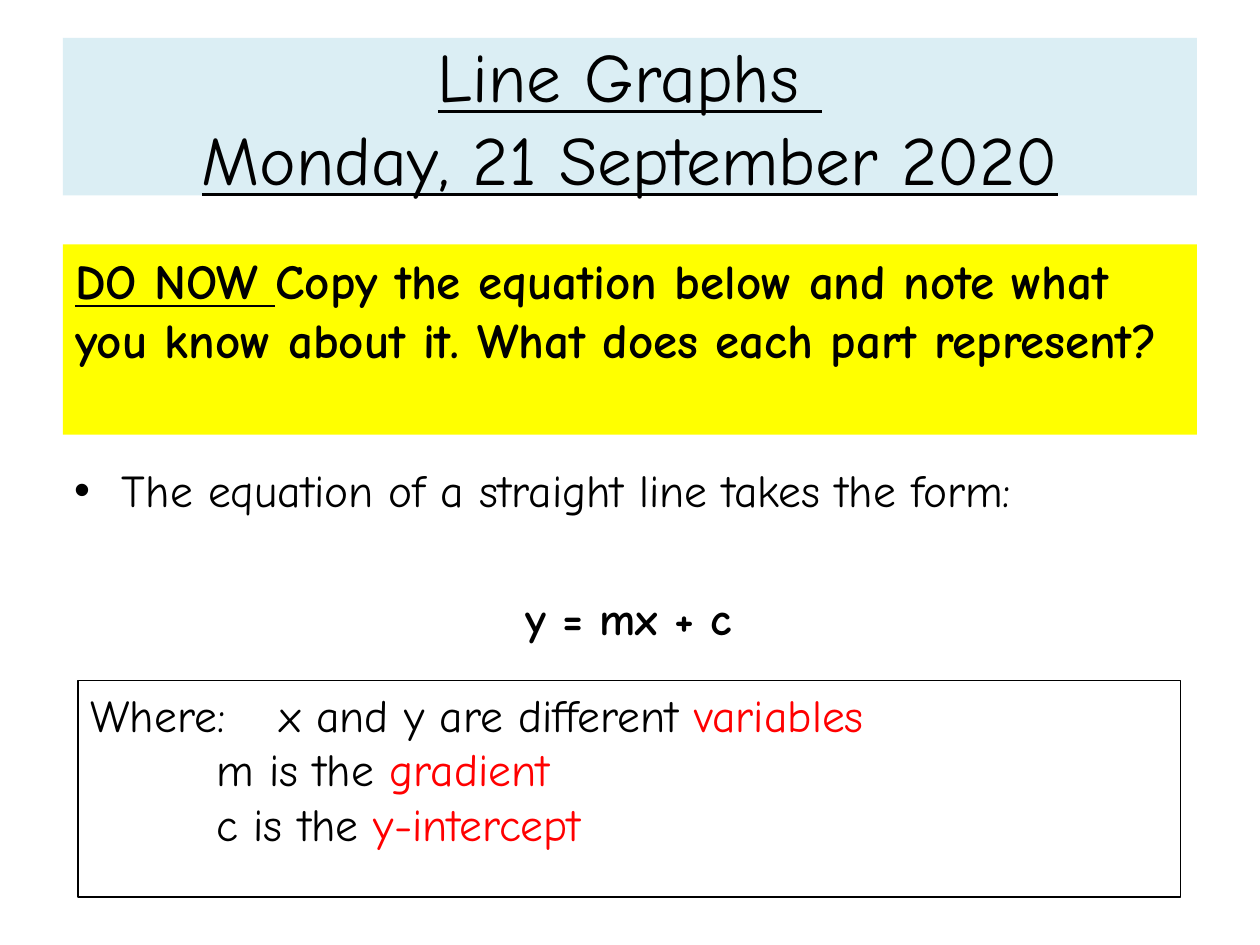
from dataclasses import dataclass

from lxml import etree
from pptx import Presentation, util as u
from pptx.dml.color import RGBColor
from pptx.enum import shapes, text
from pptx.oxml.ns import qn


@dataclass(frozen=True)
class Theme:
    font: str = "Comic Neue"
    ink: str = "000000"
    key: str = "FF0000"
    title_fill: str = "DBEEF4"
    task_fill: str = "FFFF00"
    title_size: float = 39.6
    task_size: float = 28
    body_size: float = 26


@dataclass(frozen=True)
class Span:
    words: str
    color: str = Theme.ink
    bold: bool = False
    underline: bool = False


@dataclass(frozen=True)
class Line:
    spans: tuple[Span, ...]
    centred: bool = False
    bullet: bool = False
    space_before: float = 0


@dataclass(frozen=True)
class Panel:
    # left, top, width and height as shares of the slide
    area: tuple[float, float, float, float]
    size: float
    lines: tuple[Line, ...]
    fill: str | None = None
    border: bool = False
    middle: bool = False
    top_inset: float = 0.05


THEME = Theme()
WIDTH, HEIGHT = u.Inches(10), u.Inches(7.5)


def definition(lead: str, term: str) -> Line:
    return Line((Span(lead), Span(term, THEME.key)))


PANELS = (
    # Title band
    Panel((0.05, 0.04, 0.9, 0.1667), THEME.title_size,
          (Line((Span("Line Graphs \nMonday, 21 September 2020", underline=True),),
                centred=True),),
          fill=THEME.title_fill, middle=True),
    # General equation
    Panel((0.049, 0.416, 0.9, 0.3813), THEME.body_size,
          (Line((Span("The equation of a straight line takes the form:"),), bullet=True),
           Line((Span("y = mx + c", bold=True),), centred=True, space_before=42)),
          top_inset=0.55),
    # Starter task
    Panel((0.05, 0.2587, 0.9, 0.2013), THEME.task_size,
          (Line((Span("DO NOW ", bold=True, underline=True),
                 Span("Copy the equation below and note what you know about it. "
                      "What does each part represent?", bold=True))),),
          fill=THEME.task_fill),
    # Meaning of each letter
    Panel((0.062, 0.72, 0.875, 0.2293), THEME.body_size,
          (definition("Where:\tx and y are different ", "variables"),
           definition("\t\tm is the ", "gradient"),
           definition("\t\tc is the ", "y-intercept")),
          border=True),
)


def add_bullet(para) -> None:
    props = para._p.get_or_add_pPr()
    props.set("marL", str(u.Inches(0.38)))
    props.set("indent", str(-u.Inches(0.38)))
    etree.SubElement(props, qn("a:buFont")).set("typeface", "Arial")
    etree.SubElement(props, qn("a:buChar")).set("char", "•")


def write_line(para, line: Line, size: float) -> None:
    para.alignment = text.PP_ALIGN.CENTER if line.centred else text.PP_ALIGN.LEFT
    para.space_before = u.Pt(line.space_before)
    if line.bullet:
        add_bullet(para)
    for span in line.spans:
        if len(line.spans) == 1:
            para.text = span.words
            runs = para.runs
        else:
            runs = [para.add_run()]
            runs[0].text = span.words
        for run in runs:
            run.font.name = THEME.font
            run.font.size = u.Pt(size)
            run.font.bold = span.bold
            run.font.underline = span.underline
            run.font.color.rgb = RGBColor.from_string(span.color)


def draw_panel(page, panel: Panel) -> None:
    left, top, width, height = panel.area
    place = (int(left * WIDTH), int(top * HEIGHT), int(width * WIDTH), int(height * HEIGHT))
    if panel.fill or panel.border:
        box = page.shapes.add_shape(shapes.MSO_SHAPE.RECTANGLE, *place)
        box.shadow.inherit = False
    else:
        box = page.shapes.add_textbox(*place)
    if panel.fill:
        box.fill.solid()
        box.fill.fore_color.rgb = RGBColor.from_string(panel.fill)
    else:
        box.fill.background()
    if panel.border:
        box.line.color.rgb = RGBColor.from_string(THEME.ink)
        box.line.width = u.Pt(0.75)
    else:
        box.line.fill.background()

    frame = box.text_frame
    frame.word_wrap = True
    frame.margin_top = u.Inches(panel.top_inset)
    frame.vertical_anchor = text.MSO_ANCHOR.MIDDLE if panel.middle else text.MSO_ANCHOR.TOP
    for index, line in enumerate(panel.lines):
        para = frame.add_paragraph() if index else frame.paragraphs[0]
        write_line(para, line, panel.size)


def main() -> None:
    deck = Presentation()
    deck.slide_width, deck.slide_height = WIDTH, HEIGHT
    page = deck.slides.add_slide(deck.slide_layouts[6])
    for panel in PANELS:
        draw_panel(page, panel)
    deck.save("out.pptx")


if __name__ == "__main__":
    main()
